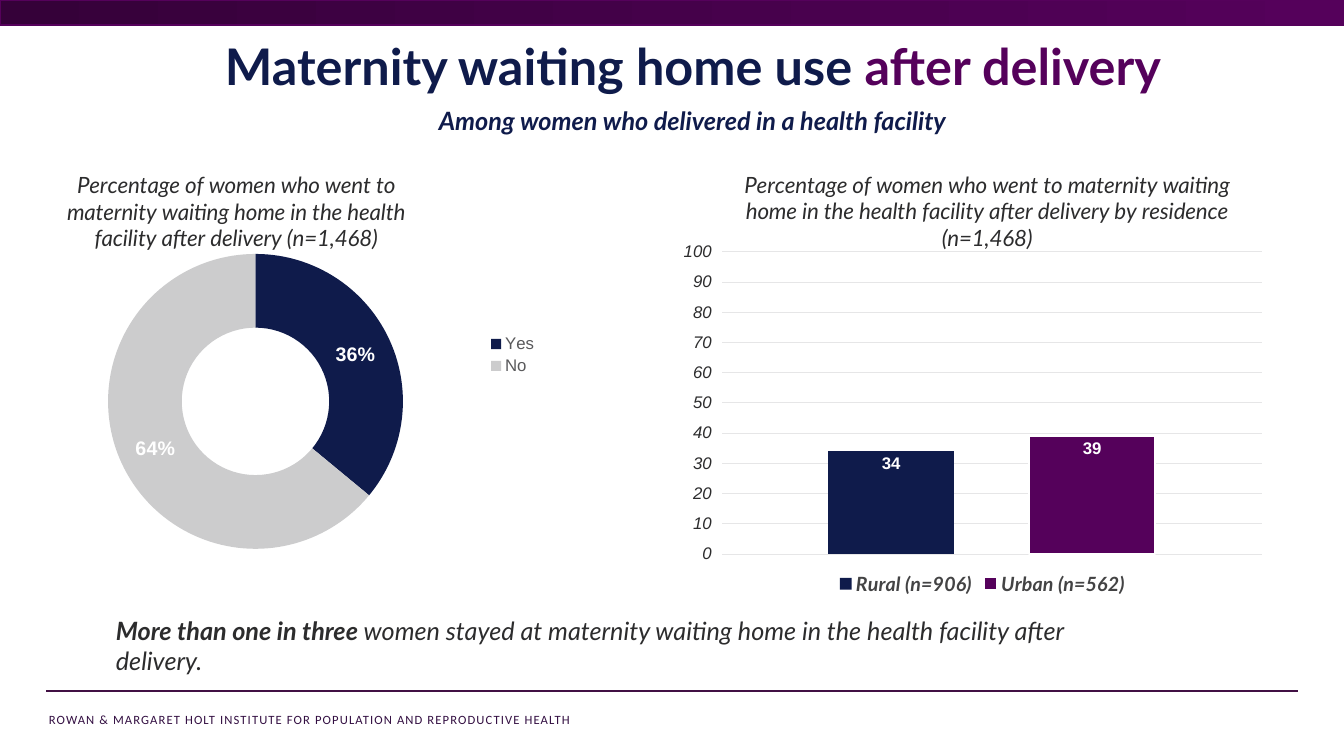
from lxml import etree
from pptx import Presentation, util as u
from pptx.chart.data import CategoryChartData
from pptx.dml.color import RGBColor
from pptx.enum import chart as charts, shapes, text
from pptx.oxml import ns

PX = 914400 / 100.8  # EMU in one px
NAVY = RGBColor(0x0F, 0x1B, 0x4B)
PURPLE = RGBColor(0x55, 0x01, 0x5B)
DARK_PURPLE = RGBColor(0x35, 0x01, 0x39)
RULE_PURPLE = RGBColor(0x41, 0x10, 0x44)
FOOTER_PURPLE = RGBColor(0x33, 0x0F, 0x42)
INK = RGBColor(0x2C, 0x2C, 0x2D)
CHART_GREY = RGBColor(0x59, 0x59, 0x5B)
LEGEND_GREY = RGBColor(0x43, 0x43, 0x44)
NO_GREY = RGBColor(0xCC, 0xCC, 0xCD)
GRID_GREY = RGBColor(0xE6, 0xE6, 0xE7)
WHITE = RGBColor(0xFF, 0xFF, 0xFF)


def px(*lengths):
    return [u.Emu(round(length * PX)) for length in lengths]


def set_font(font, size, color, name="Lato", bold=False, italic=False):
    font.size, font.name = u.Pt(size), name
    font.bold, font.italic = bold, italic
    font.color.rgb = color


def add_text(slide, box, runs, align=text.PP_ALIGN.LEFT,
             anchor=text.MSO_ANCHOR.TOP, spacing=None, tracking=None):
    """Add one paragraph; runs are pairs of wording and font settings."""
    frame = slide.shapes.add_textbox(*px(*box)).text_frame
    frame.word_wrap = True
    frame.vertical_anchor = anchor
    paragraph = frame.paragraphs[0]
    paragraph.alignment = align
    paragraph.line_spacing = spacing
    for wording, font in runs:
        run = paragraph.add_run()
        run.text = wording
        set_font(run.font, **font)
        if tracking:
            run.font._element.set("spc", str(tracking))


def add_band(slide, box):
    band = slide.shapes.add_shape(shapes.MSO_SHAPE.RECTANGLE, *px(*box))
    band.shadow.inherit = False
    band.fill.gradient()
    band.fill.gradient_angle = 0
    for stop, color, position in zip(band.fill.gradient_stops, (DARK_PURPLE, PURPLE), (0, 1)):
        stop.color.rgb, stop.position = color, position
    band.line.color.rgb = PURPLE
    band.line.width = u.Pt(1)


def add_rule(slide, ends):
    rule = slide.shapes.add_connector(shapes.MSO_CONNECTOR.STRAIGHT, *px(*ends))
    rule.line.color.rgb = RULE_PURPLE
    rule.line.width = u.Pt(1.25)
    etree.SubElement(rule._element.spPr, ns.qn("a:effectLst"))


def set_layout(parent, index, **settings):
    """Place a chart part by fractions of the chart's size."""
    for old in parent.findall(ns.qn("c:layout")):
        parent.remove(old)
    layout = etree.Element(ns.qn("c:layout"))
    manual = etree.SubElement(layout, ns.qn("c:manualLayout"))
    for tag, value in settings.items():
        etree.SubElement(manual, ns.qn("c:" + tag)).set("val", str(value))
    parent.insert(index, layout)


def add_chart(slide, kind, box, title, title_at, plot_at, categories, series, number_format):
    data = CategoryChartData(number_format=number_format)
    data.categories = categories
    for name, values in series:
        data.add_series(name, values)
    chart = slide.shapes.add_chart(kind, *px(*box), data).chart
    set_font(chart.font, 10, CHART_GREY, "Arial")

    chart.has_title = True
    frame = chart.chart_title.text_frame
    frame.text = title
    set_font(frame.paragraphs[0].runs[0].font, 16, INK, italic=True)
    chart.chart_title.include_in_layout = False
    set_layout(chart.chart_title._element, 1, xMode="edge", yMode="edge",
               x=title_at[0], y=title_at[1])
    x, y, w, h = plot_at
    set_layout(chart._chartSpace.chart.plotArea, 0, layoutTarget="inner",
               xMode="edge", yMode="edge", x=x, y=y, w=w, h=h)
    return chart


def add_legend(chart, position, **font):
    chart.has_legend = True
    chart.legend.position = position
    chart.legend.include_in_layout = False
    set_font(chart.legend.font, **font)


def show_values(labels, size, number_format):
    labels.show_value = True
    labels.number_format = number_format
    labels.number_format_is_linked = False
    set_font(labels.font, size, WHITE, "Arial", bold=True)


def fill_solid(part, color):
    part.format.fill.solid()
    part.format.fill.fore_color.rgb = color


def add_share_doughnut(slide):
    title = ("Percentage of women who went to maternity waiting home "
             "in the health facility after delivery (n=1,468)")
    chart = add_chart(slide, charts.XL_CHART_TYPE.DOUGHNUT, (48, 153, 500, 404), title,
                      (0.03, 0.03), (0.12, 0.25, 0.59, 0.73),
                      ["Yes", "No"], [(title, (0.36, 0.64))], "0%")
    add_legend(chart, charts.XL_LEGEND_POSITION.RIGHT, size=12, color=CHART_GREY, name="Arial")
    plot = chart.plots[0]
    plot._element.find(ns.qn("c:holeSize")).set("val", "75")
    for index, color in enumerate((NAVY, NO_GREY)):
        fill_solid(plot.series[0].points[index], color)
    plot.has_data_labels = True
    plot.data_labels.show_percentage = False
    show_values(plot.data_labels, 14, "0%")


def add_residence_columns(slide):
    title = ("Percentage of women who went to maternity waiting home "
             "in the health facility after delivery by residence (n=1,468)")
    chart = add_chart(slide, charts.XL_CHART_TYPE.COLUMN_CLUSTERED, (672, 142, 621, 458), title,
                      (0.11, 0.05), (0.08, 0.24, 0.87, 0.66), ["1"],
                      [("Rural (n=906)", (34,)), ("Urban (n=562)", (39,))], "0")
    add_legend(chart, charts.XL_LEGEND_POSITION.BOTTOM, size=14, color=LEGEND_GREY,
               bold=True, italic=True)
    plot = chart.plots[0]
    plot.gap_width, plot.overlap = 170, -60
    plot.vary_by_categories = False
    for series, color in zip(plot.series, (NAVY, PURPLE)):
        fill_solid(series, color)
        show_values(series.data_labels, 12, "0")
        series.data_labels.position = charts.XL_LABEL_POSITION.INSIDE_END
    urban_line = plot.series[1].format.line
    urban_line.color.rgb, urban_line.width = WHITE, u.Pt(1.5)

    # Axes
    chart.category_axis.visible = False
    axis = chart.value_axis
    axis.minimum_scale, axis.maximum_scale, axis.major_unit = 0, 100, 10
    axis.format.line.fill.background()
    axis.major_gridlines.format.line.color.rgb = GRID_GREY
    axis.major_gridlines.format.line.width = u.Pt(0.75)
    axis.tick_labels.number_format = "0"
    axis.tick_labels.number_format_is_linked = False
    set_font(axis.tick_labels.font, 12, INK, "Arial", italic=True)


def main():
    presentation = Presentation()
    presentation.slide_width, presentation.slide_height = px(1344, 756)
    slide = presentation.slides.add_slide(presentation.slide_layouts[6])
    center = text.PP_ALIGN.CENTER

    # Frame of the page
    add_text(slide, (39, 707, 744, 25),
             [("ROWAN & MARGARET HOLT INSTITUTE FOR POPULATION AND REPRODUCTIVE HEALTH",
               dict(size=9, color=FOOTER_PURPLE, name="Calibri"))], tracking=80)
    add_rule(slide, (1298, 691, 46, 691))
    add_band(slide, (0, 0, 1344, 25))

    # Headings
    heading = dict(size=36, bold=True)
    add_text(slide, (75, 44, 1236, 57),
             [("Maternity waiting home use ", dict(heading, color=NAVY)),
              ("after delivery", dict(heading, color=PURPLE))],
             align=center, anchor=text.MSO_ANCHOR.BOTTOM, spacing=0.9)
    add_text(slide, (234, 100, 917, 40),
             [("Among women who delivered in a health facility",
               dict(size=18, color=NAVY, bold=True, italic=True))], align=center)

    # Charts
    add_share_doughnut(slide)
    add_residence_columns(slide)

    # Main finding
    finding = dict(size=18, color=INK, italic=True)
    add_text(slide, (106, 610, 992, 72),
             [("More than one in three ", dict(finding, bold=True)),
              ("women stayed at maternity waiting home in the health facility after delivery.",
               finding)])

    presentation.save("out.pptx")


if __name__ == "__main__":
    main()
